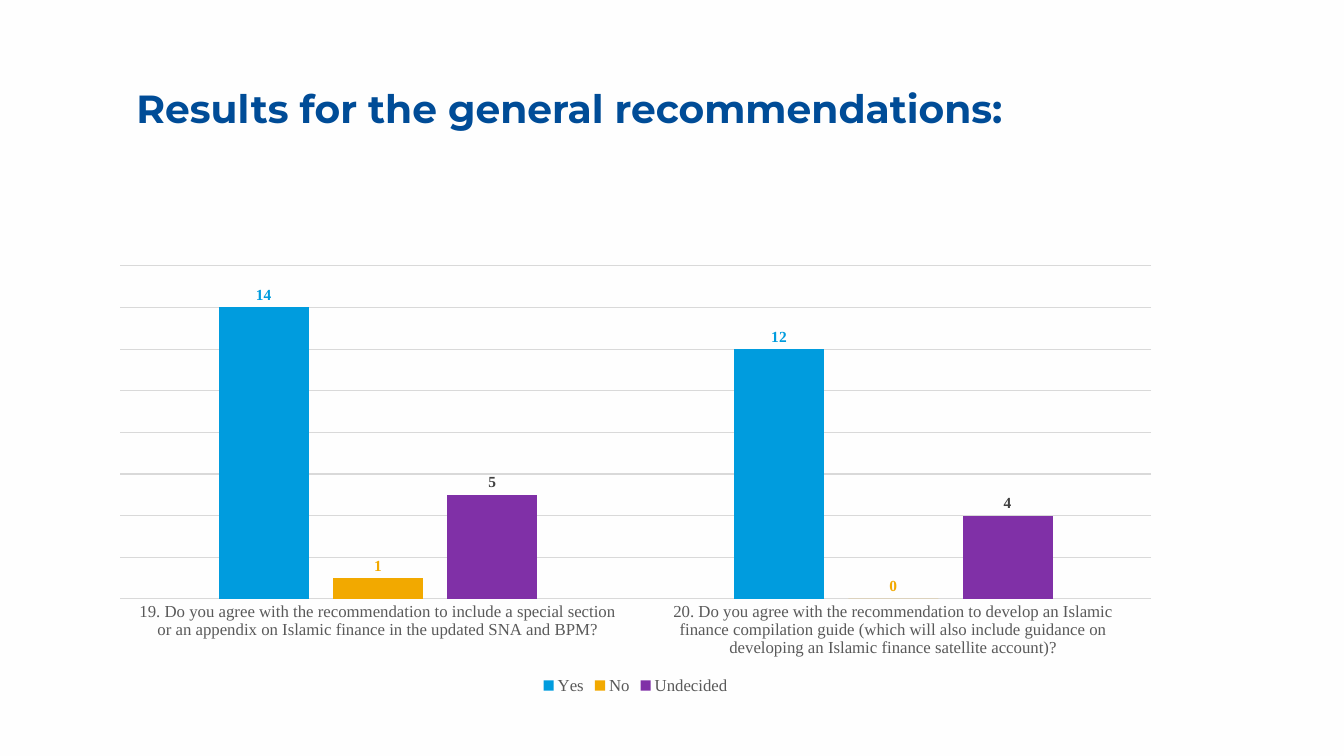
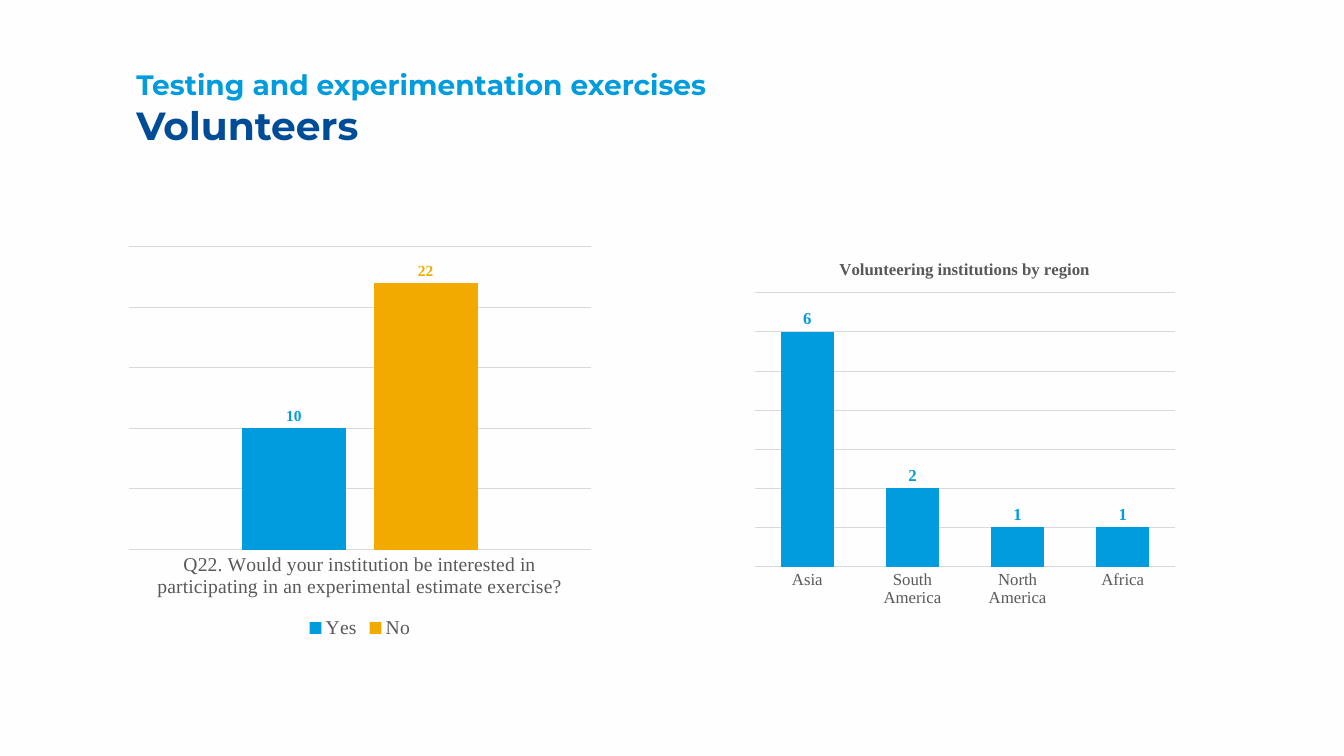
import dataclasses

import lxml.etree
import pptx
import pptx.chart.data
import pptx.dml.color
import pptx.enum.chart
import pptx.enum.text
import pptx.oxml.ns
import pptx.util


@dataclasses.dataclass(frozen=True)
class Theme:
    back: str = "FEFEFE"
    navy: str = "004C97"
    blue: str = "009CDE"
    gold: str = "F2A900"
    plum: str = "8030A7"
    gray: str = "595959"
    dark: str = "404040"
    black: str = "000000"
    rule: str = "D9D9D9"
    head: str = "Montserrat"
    body: str = "Times New Roman"
    title: int = 28
    kicker: int = 20
    large: int = 14
    label: int = 12
    small: int = 11


theme = Theme()
rgb = pptx.dml.color.RGBColor.from_string
qn = pptx.oxml.ns.qn

deck = pptx.Presentation()
deck.slide_width = pptx.util.Inches(13.33)
deck.slide_height = pptx.util.Inches(7.5)
fill = deck.slide_master.background.fill
fill.solid()
fill.fore_color.rgb = rgb(theme.back)


def style(font, size, color, bold=False, name=theme.body):
    values = {"size": pptx.util.Pt(size), "bold": bold, "name": name}
    for key, value in values.items():
        setattr(font, key, value)
    font.color.rgb = rgb(color)


def place(left, top, width, height):
    """Turn a grid of 100 columns by 100 rows into slide lengths."""
    col, row = deck.slide_width / 100, deck.slide_height / 100
    return [round(n) for n in (left * col, top * row, width * col, height * row)]


# Content: series are (name, values, fill colour, label colour)
region = "Volunteering institutions by region"
pages = [
    {
        "title": [("Results for the general recommendations:", theme.title, theme.navy)],
        "charts": [
            {
                "box": (7.35, 34, 79.89, 58.4),
                "cats": [
                    "19. Do you agree with the recommendation to include a special section "
                    "or an appendix on Islamic finance in the updated SNA and BPM?",
                    "20. Do you agree with the recommendation to develop an Islamic "
                    "finance compilation guide (which will also include guidance on "
                    "developing an Islamic finance satellite account)?",
                ],
                "series": [
                    ("Yes", (14, 12), theme.blue, theme.blue),
                    ("No", (1, 0), theme.gold, theme.gold),
                    ("Undecided", (5, 4), theme.plum, theme.dark),
                ],
                "top": 16, "step": 2, "gap": 219, "lap": -27,
                "text": theme.label, "mark": theme.small, "legend": True,
            },
        ],
    },
    {
        "title": [
            ("Testing and experimentation exercises", theme.kicker, theme.blue),
            ("Volunteers", theme.title, theme.navy),
        ],
        "charts": [
            {
                "box": (8.85, 31.6, 35.86, 53.47),
                "cats": ["Q22. Would your institution be interested in "
                         "participating in an experimental estimate exercise?"],
                "series": [
                    ("Yes", (10,), theme.blue, theme.blue),
                    ("No", (22,), theme.gold, theme.gold),
                ],
                "top": 25, "step": 5, "gap": 219, "lap": -27,
                "text": theme.large, "mark": theme.small, "legend": True,
            },
            {
                "box": (54.46, 32.13, 34.66, 52.93),
                "plot": (4.9, 12.5, 90.3, 68.4),
                "cats": ["Asia", "South America", "North America", "Africa"],
                "series": [(region, (6, 2, 1, 1), theme.blue, theme.blue)],
                "top": 7, "step": 1, "gap": 100, "lap": 0,
                "text": theme.label, "mark": theme.label, "legend": False,
            },
        ],
    },
]

for page in pages:
    slide = deck.slides.add_slide(deck.slide_layouts[5])

    # Title
    title = slide.shapes.title
    title.left, title.top, title.width, title.height = place(10.15, 7.1, 79.67, 14.27)
    frame = title.text_frame
    form = {
        "margin_left": 0, "margin_top": 0, "margin_right": 0, "margin_bottom": 0,
        "word_wrap": True,
        "auto_size": pptx.enum.text.MSO_AUTO_SIZE.NONE,
        "vertical_anchor": pptx.enum.text.MSO_ANCHOR.MIDDLE,
    }
    for key, value in form.items():
        setattr(frame, key, value)
    para = frame.paragraphs[0]
    para.alignment = pptx.enum.text.PP_ALIGN.LEFT
    for i, (text, size, color) in enumerate(page["title"]):
        if i:
            para.add_line_break()
        run = para.add_run()
        run.text = text
        style(run.font, size, color, True, theme.head)

    for item in page["charts"]:
        # Data
        data = pptx.chart.data.CategoryChartData()
        data.categories = item["cats"]
        for name, values, *_ in item["series"]:
            data.add_series(name, values)
        kind = pptx.enum.chart.XL_CHART_TYPE.COLUMN_CLUSTERED
        chart = slide.shapes.add_chart(kind, *place(*item["box"]), data).chart
        style(chart.font, theme.small, theme.black)

        # Columns and their labels
        plot = chart.plots[0]
        plot.gap_width, plot.overlap = item["gap"], item["lap"]
        plot.vary_by_categories = False
        for series, (_, _, color, ink) in zip(plot.series, item["series"]):
            series.format.fill.solid()
            series.format.fill.fore_color.rgb = rgb(color)
            labels = series.data_labels
            labels.show_value = True
            labels.position = pptx.enum.chart.XL_LABEL_POSITION.OUTSIDE_END
            style(labels.font, item["mark"], ink, True)

        # Axes; the stated rotation lets long category names wrap
        none = pptx.enum.chart.XL_TICK_MARK.NONE
        cat, val = chart.category_axis, chart.value_axis
        cat.major_tick_mark = cat.minor_tick_mark = none
        style(cat.tick_labels.font, item["text"], theme.gray)
        steps = [qn(tag) for tag in ("c:catAx", "c:txPr", "a:bodyPr")]
        body = chart.element.find(".//" + "/".join(steps))
        for key, value in {"rot": "-60000000", "vert": "horz"}.items():
            body.set(key, value)
        limits = {
            "minimum_scale": 0, "maximum_scale": item["top"],
            "major_unit": item["step"], "has_major_gridlines": True, "visible": False,
        }
        for key, value in limits.items():
            setattr(val, key, value)
        for line in (cat.format.line, val.major_gridlines.format.line):
            line.color.rgb = rgb(theme.rule)
            line.width = pptx.util.Pt(0.75)

        # Legend, or the series name as heading
        chart.has_legend = item["legend"]
        chart.has_title = not item["legend"]
        if item["legend"]:
            chart.legend.position = pptx.enum.chart.XL_LEGEND_POSITION.BOTTOM
            chart.legend.include_in_layout = False
            style(chart.legend.font, item["text"], theme.gray)
        else:
            head = chart.chart_title.text_frame
            head.text = item["series"][0][0]
            style(head.paragraphs[0].runs[0].font, item["text"], theme.gray, True)

        # Inner plot area, in hundredths of the chart
        if "plot" in item:
            area = chart.element.find(".//" + qn("c:plotArea"))
            for old in area.findall(qn("c:layout")):
                area.remove(old)
            layout = lxml.etree.Element(qn("c:layout"))
            area.insert(0, layout)
            manual = lxml.etree.SubElement(layout, qn("c:manualLayout"))
            rules = {"layoutTarget": "inner", "xMode": "edge", "yMode": "edge"}
            rules.update(zip("xywh", (n / 100 for n in item["plot"])))
            for key, value in rules.items():
                lxml.etree.SubElement(manual, qn("c:" + key), val=str(value))

deck.save("out.pptx")
